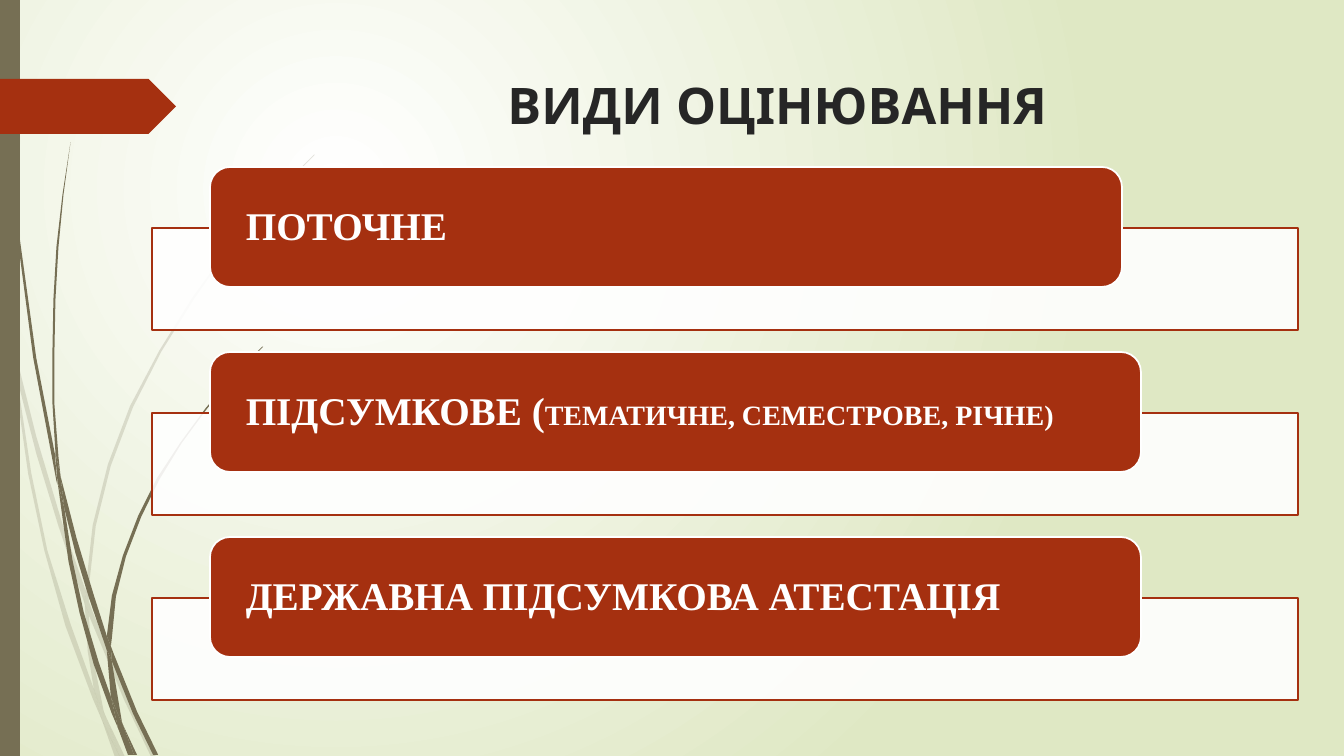
from lxml import etree
from pptx import Presentation
from pptx.dml.color import RGBColor
from pptx.enum.shapes import MSO_SHAPE
from pptx.enum.text import MSO_ANCHOR, PP_ALIGN
from pptx.oxml.ns import qn
from pptx.util import Pt

RECT, ROUND, PENTAGON = MSO_SHAPE.RECTANGLE, MSO_SHAPE.ROUNDED_RECTANGLE, MSO_SHAPE.PENTAGON
MIDDLE = MSO_ANCHOR.MIDDLE
LEFT, CENTER = PP_ALIGN.LEFT, PP_ALIGN.CENTER

THEME = {
    "accent": "A53010", "stem": "766F54", "white": "FFFFFF", "dark": "262626",
    "edge": "DFE8C4", "title_font": "League Spartan", "body_font": "Times New Roman",
    "title": 36, "body": 28, "detail": 20, "line": 1.25,
}
PX = 914400 / 100.8
STEM_GRID = PX * 1.008
WIDTH, HEIGHT = 1344, 756

TITLE = "ВИДИ ОЦІНЮВАННЯ"
KINDS = [
    (912, [("ПОТОЧНЕ", "body")]),
    (931, [("ПІДСУМКОВЕ (", "body"), ("ТЕМАТИЧНЕ, СЕМЕСТРОВЕ, РІЧНЕ)", "detail")]),
    (931, [("ДЕРЖАВНА ПІДСУМКОВА АТЕСТАЦІЯ", "body")]),
]
TAG_LEFT, TAG_TOP, TAG_HEIGHT = 210, 167, 120
FRAME_LEFT, FRAME_WIDTH, FRAME_HEIGHT, FRAME_DROP = 152, 1146, 102, 61
PITCH = 185

PALE_STEMS = [
    [(11, 350), (9, 322), (0, 282), (0, 299), (10, 344)],
    [(58, 522), (84, 599), (85, 586), (62, 520), (36, 433), (14, 345), (17, 376), (36, 450)],
    [(92, 607), (88, 596), (88, 610), (123, 694), (150, 751), (155, 751), (127, 692)],
    [(119, 751), (124, 751), (105, 711)],
    [(93, 683), (70, 619), (47, 546), (31, 469), (17, 376), (11, 350), (28, 470),
     (44, 546), (65, 621), (92, 693), (101, 714), (99, 707)],
    [(84, 599), (87, 646), (93, 683), (96, 692), (105, 711), (103, 706), (91, 646),
     (88, 610), (88, 608)],
    [(88, 584), (95, 522), (110, 462), (132, 404), (160, 349), (193, 296), (229, 245),
     (268, 198), (312, 154), (312, 153), (268, 197), (228, 244), (191, 295), (158, 348),
     (129, 403), (107, 461), (92, 521), (85, 584), (85, 586), (88, 596)],
    [(101, 714), (114, 751), (119, 751)],
    [(88, 608), (88, 596), (85, 586), (84, 599)],
    [(96, 692), (93, 683), (99, 707), (101, 714), (119, 751), (105, 711)],
]
DARK_STEMS = [
    [(7, 110), (17, 233), (33, 355), (56, 477), (57, 481), (55, 457), (55, 453),
     (36, 355), (19, 232), (8, 109), (5, 48), (4, 0), (3, 0), (4, 48)],
    [(88, 592), (106, 645), (106, 631), (93, 590), (76, 534), (60, 472), (64, 505), (75, 549)],
    [(113, 649), (110, 641), (111, 656), (132, 708), (152, 749), (157, 749), (136, 706)],
    [(110, 691), (98, 657), (83, 607), (72, 556), (64, 505), (57, 477), (68, 557),
     (79, 608), (93, 659), (111, 708), (117, 722), (116, 717)],
    [(60, 472), (58, 453), (54, 401), (54, 349), (55, 297), (58, 245), (63, 193), (70, 141),
     (62, 193), (56, 245), (53, 297), (52, 349), (52, 400), (55, 449)],
    [(133, 749), (136, 749), (122, 719)],
    [(57, 477), (64, 505), (60, 472), (55, 449), (55, 453)],
    [(111, 633), (115, 592), (125, 552), (140, 513), (158, 476), (180, 440), (205, 406),
     (231, 374), (261, 344), (260, 344), (231, 373), (204, 405), (179, 439), (156, 474),
     (137, 512), (122, 551), (111, 591), (106, 631), (110, 641)],
    [(117, 722), (127, 749), (131, 749)],
    [(106, 645), (110, 691), (116, 706), (122, 719), (121, 716), (111, 656), (109, 651)],
    [(106, 645), (109, 651), (111, 656), (110, 641), (106, 631)],
    [(116, 706), (110, 691), (116, 717), (117, 722), (130, 749), (133, 749), (122, 719)],
]


def color(name):
    return RGBColor.from_string(THEME[name])


def paint(sp, fill, opacity=100, line=None):
    sp.shadow.inherit = False
    sp.fill.solid()
    sp.fill.fore_color.rgb = color(fill)
    if opacity < 100:
        rgb = sp.fill._xPr.find(qn("a:solidFill"))[0]
        etree.SubElement(rgb, qn("a:alpha")).set("val", str(opacity * 1000))
    if line:
        sp.line.color.rgb = color(line)
        sp.line.width = Pt(THEME["line"])
    else:
        sp.line.fill.background()


def add_box(slide, kind, box, fill, **style):
    sp = slide.shapes.add_shape(kind, *(round(v * PX) for v in box))
    paint(sp, fill, **style)
    return sp


def add_stem(slide, outline, opacity):
    builder = slide.shapes.build_freeform(*outline[0], scale=STEM_GRID)
    builder.add_line_segments(outline[1:], close=True)
    paint(builder.convert_to_shape(), "stem", opacity)


def write(sp, runs, font, ink, align, inset):
    tf = sp.text_frame
    tf.word_wrap = True
    tf.vertical_anchor = MIDDLE
    tf.margin_left = tf.margin_right = round(inset * PX)
    tf.margin_top, tf.margin_bottom = round(2 * PX), 0
    p = tf.paragraphs[0]
    p.alignment = align
    for text, size in runs:
        r = p.add_run()
        r.text = text
        r.font.name = THEME[font]
        r.font.size = Pt(THEME[size])
        r.font.bold = True
        r.font.color.rgb = color(ink)
    return p


def set_background(slide):
    fill = slide.background.fill
    fill.gradient()
    for stop, name in zip(fill.gradient_stops, ("white", "edge")):
        stop.color.rgb = color(name)
    grad = slide.element.find(".//" + qn("a:gradFill"))
    grad.remove(grad.find(qn("a:lin")))
    circle = etree.SubElement(grad, qn("a:path"))
    circle.set("path", "circle")
    focus = etree.SubElement(circle, qn("a:fillToRect"))
    for side, share in zip("ltrb", (50, 50, 100, 100)):
        focus.set(side, str(share * 1000))


def main():
    prs = Presentation()
    prs.slide_width, prs.slide_height = round(WIDTH * PX), round(HEIGHT * PX)
    slide = prs.slides.add_slide(prs.slide_layouts[6])
    set_background(slide)
    for stems, opacity in ((PALE_STEMS, 20), (DARK_STEMS, 100)):
        for outline in stems:
            add_stem(slide, outline, opacity)
    add_box(slide, RECT, (0, 0, 20, HEIGHT), "stem")
    add_box(slide, PENTAGON, (0, 79, 176, 55), "accent")

    title = slide.shapes.add_textbox(*(round(v * PX) for v in (286, 67, 983, 73)))
    write(title, [(TITLE, "title")], "title_font", "dark", CENTER, 10)

    for i, (width, runs) in enumerate(KINDS):
        top = TAG_TOP + i * PITCH
        frame = (FRAME_LEFT, top + FRAME_DROP, FRAME_WIDTH, FRAME_HEIGHT)
        add_box(slide, RECT, frame, "white", opacity=90, line="accent")
        tag = add_box(slide, ROUND, (TAG_LEFT, top, width, TAG_HEIGHT), "accent", line="white")
        p = write(tag, runs, "body_font", "white", LEFT, 30)
        p.line_spacing = 0.9
    prs.save("out.pptx")


if __name__ == "__main__":
    main()
